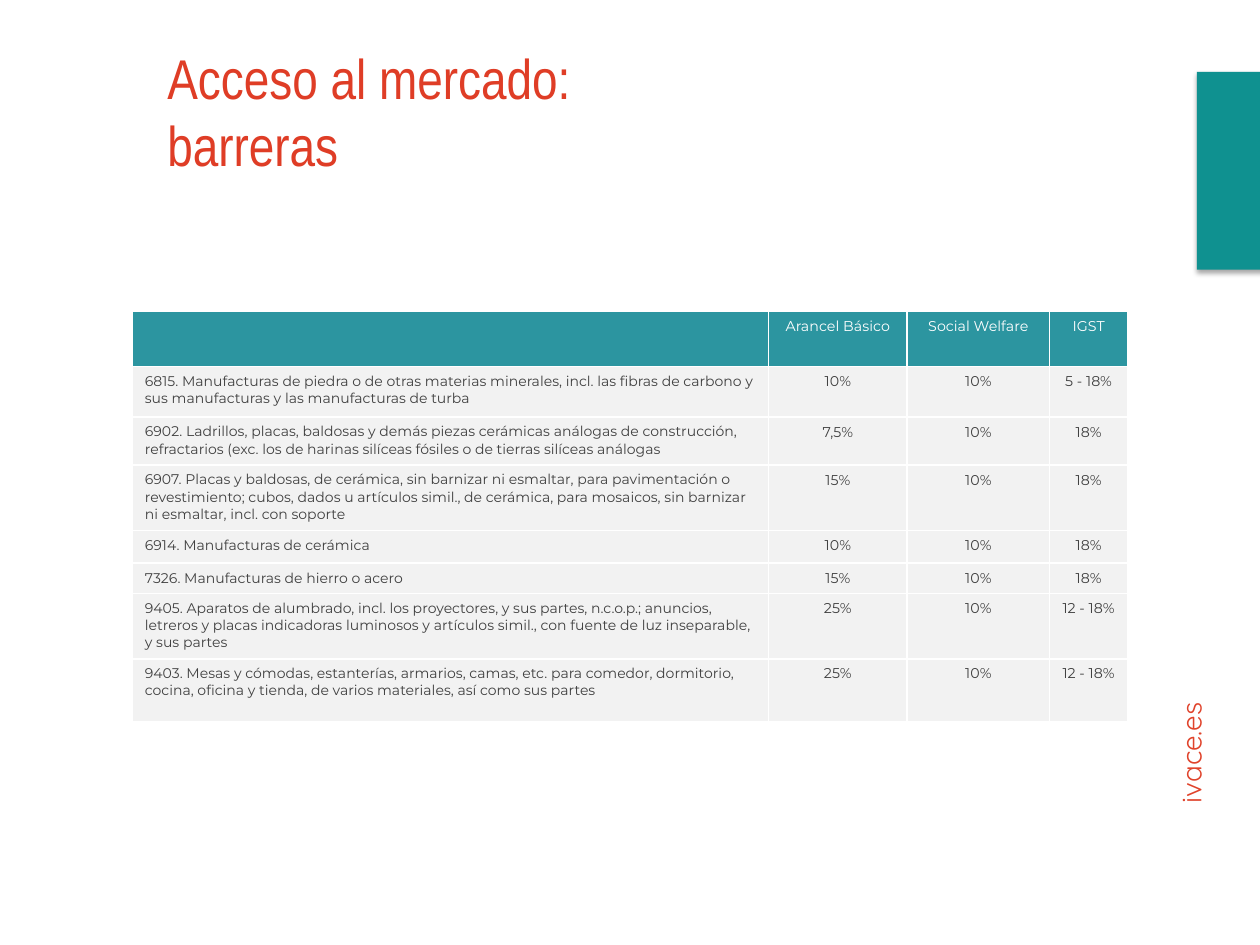
from lxml.etree import SubElement
from pptx import Presentation
from pptx.dml.color import RGBColor
from pptx.enum.shapes import MSO_SHAPE as Shape
from pptx.enum.text import MSO_ANCHOR as Anchor, PP_ALIGN as Align
from pptx.oxml.ns import qn
from pptx.util import Inches, Pt

COLORS = {
    "title": "DF3D26", "site": "E0432B", "tab": "0F9190", "header": "2C95A0",
    "body": "F2F2F2", "text": "404040", "white": "FFFFFF", "shadow": "000000",
}
TITLE = "Acceso al mercado: barreras"
SITE = "ivace.es"
ROWS = [
    ("", "Arancel Básico", "Social Welfare", "IGST"),
    ("6815. Manufacturas de piedra o de otras materias minerales, incl. las fibras de "
     "carbono y sus manufacturas y las manufacturas de turba", "10%", "10%", "5 - 18%"),
    ("6902. Ladrillos, placas, baldosas y demás piezas cerámicas análogas de construcción, "
     "refractarios (exc. los de harinas silíceas fósiles o de tierras silíceas análogas",
     "7,5%", "10%", "18%"),
    ("6907. Placas y baldosas, de cerámica, sin barnizar ni esmaltar, para pavimentación o "
     "revestimiento; cubos, dados u artículos simil., de cerámica, para mosaicos, sin "
     "barnizar ni esmaltar, incl. con soporte", "15%", "10%", "18%"),
    ("6914. Manufacturas de cerámica", "10%", "10%", "18%"),
    ("7326. Manufacturas de hierro o acero", "15%", "10%", "18%"),
    ("9405. Aparatos de alumbrado, incl. los proyectores, y sus partes, n.c.o.p.; anuncios, "
     "letreros y placas indicadoras luminosos y artículos simil., con fuente de luz "
     "inseparable, y sus partes", "25%", "10%", "12 - 18%"),
    ("9403. Mesas y cómodas, estanterías, armarios, camas, etc. para comedor, dormitorio, "
     "cocina, oficina y tienda, de varios materiales, así como sus partes",
     "25%", "10%", "12 - 18%"),
]
COLUMN_WIDTHS = [5.05, 1.1, 1.13, 0.62]
ROW_HEIGHTS = [0.44, 0.4, 0.38, 0.52, 0.26, 0.24, 0.52, 0.5]


def rgb(name):
    return RGBColor.from_string(COLORS[name])


def write(frame, text, *, font, size, color, align=Align.LEFT):
    para = frame.paragraphs[0]
    para.alignment = align
    para.font.size = Pt(size)
    if not text:
        return
    span = para.add_run()
    span.text = text
    span.font.name = font
    span.font.size = Pt(size)
    span.font.color.rgb = rgb(color)


def add_text(page, text, place, *, anchor=Anchor.TOP, rotation=0, **style):
    box = page.shapes.add_textbox(*map(Inches, place))
    box.rotation = rotation
    box.text_frame.word_wrap = True
    box.text_frame.vertical_anchor = anchor
    write(box.text_frame, text, **style)


def add_solid(parent, color):
    fill = SubElement(parent, qn("a:solidFill"))
    return SubElement(fill, qn("a:srgbClr"), val=COLORS[color])


def set_borders(cell, **widths):
    """Draw white borders; widths are in points, keyed by side (L, R, T, B)."""
    properties = cell._tc.get_or_add_tcPr()
    for index, (side, width) in enumerate(widths.items()):
        line = properties.makeelement(qn(f"a:ln{side}"), {"w": str(Pt(width))})
        properties.insert(index, line)
        add_solid(line, "white")


def add_tariff_table(page):
    frame = page.shapes.add_table(
        len(ROWS), len(COLUMN_WIDTHS), Inches(1.05), Inches(2.47),
        Inches(sum(COLUMN_WIDTHS)), Inches(sum(ROW_HEIGHTS)))
    table = frame.table
    for column, width in zip(table.columns, COLUMN_WIDTHS):
        column.width = Inches(width)
    for row, height in zip(table.rows, ROW_HEIGHTS):
        row.height = Inches(height)
    for r, values in enumerate(ROWS):
        header = r == 0
        for c, text in enumerate(values):
            cell = table.cell(r, c)
            cell.fill.solid()
            cell.fill.fore_color.rgb = rgb("header" if header else "body")
            set_borders(cell, L=1, R=1, T=1, B=1)
            write(cell.text_frame, text, font="Montserrat",
                  size=8 if c == 0 else 8.1,
                  color="white" if header else "text",
                  align=Align.LEFT if c == 0 else Align.CENTER)


def add_side_tab(page):
    tab = page.shapes.add_shape(Shape.RECTANGLE, *map(Inches, (9.5, 0.57, 0.6, 1.57)))
    tab.fill.solid()
    tab.fill.fore_color.rgb = rgb("tab")
    tab.line.fill.background()
    tab.shadow.inherit = False
    effects = tab._element.spPr.find(qn("a:effectLst"))
    shadow = SubElement(effects, qn("a:outerShdw"), blurRad=str(Pt(3.1)),
                        dist=str(Pt(1.8)), dir="5400000", rotWithShape="0")
    color = SubElement(shadow, qn("a:srgbClr"), val=COLORS["shadow"])
    SubElement(color, qn("a:alpha"), val="35000")


def main():
    deck = Presentation()
    deck.slide_width, deck.slide_height = Inches(10), Inches(7.5)
    page = deck.slides.add_slide(deck.slide_layouts[6])
    add_text(page, SITE, (8.45, 4.91, 2.38, 0.75), rotation=270,
             font="Quicksand", size=16, color="site")
    add_tariff_table(page)
    add_text(page, TITLE, (1.23, 0.25, 4.63, 1.25), anchor=Anchor.MIDDLE,
             font="Arial Narrow", size=32, color="title")
    add_side_tab(page)
    deck.save("out.pptx")


if __name__ == "__main__":
    main()
